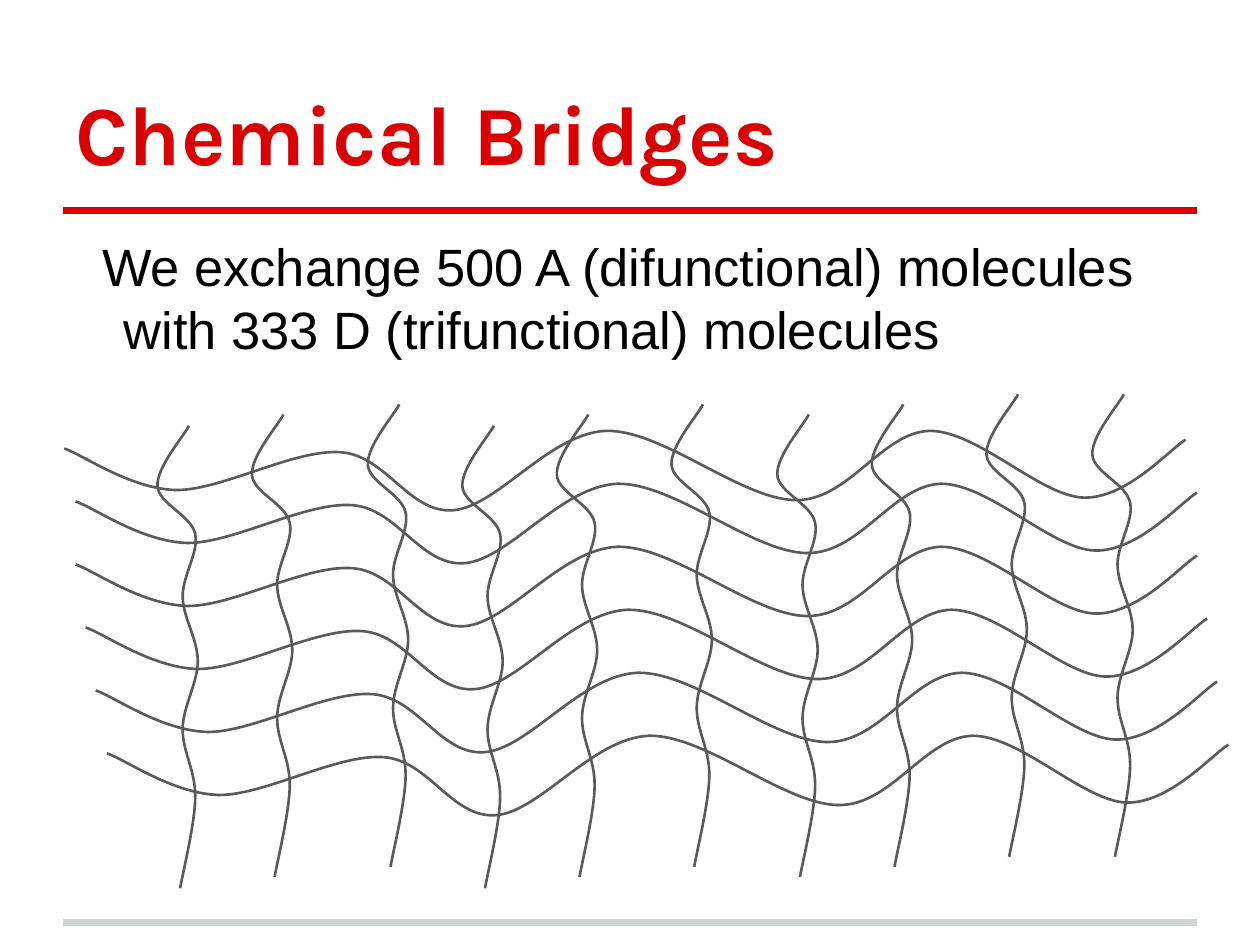
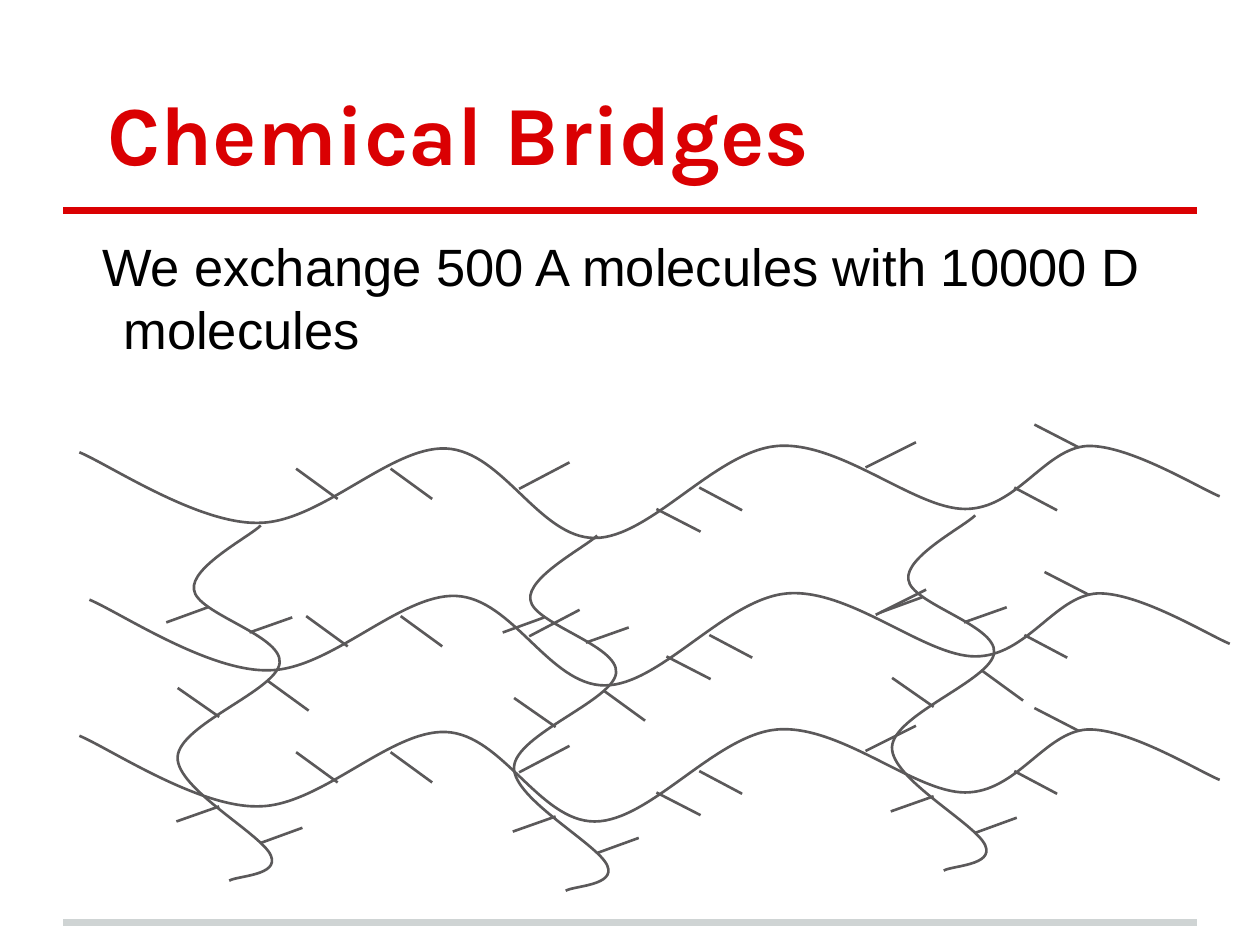
from dataclasses import dataclass

from lxml.etree import SubElement
from pptx import Presentation
from pptx.dml.color import RGBColor
from pptx.enum.shapes import MSO_CONNECTOR as Connector
from pptx.enum.text import MSO_ANCHOR as Anchor, MSO_AUTO_SIZE as AutoSize, PP_ALIGN as Align
from pptx.oxml.ns import qn
from pptx.util import Inches, Pt

Point = tuple[float, float]

COLORS = {"accent": "DA0002", "footer": "CFD4D4", "strand": "5B595A", "text": "000000"}
TITLE_FONT = {"name": "Karla", "size": Pt(48), "bold": True}
BODY_FONT = {"name": "Arial", "size": Pt(30), "bold": False}
INSETS = {f"margin_{side}": Inches(0.1) for side in ("left", "top", "right", "bottom")}
TITLE_FRAME = {**INSETS, "vertical_anchor": Anchor.BOTTOM, "word_wrap": True,
               "auto_size": AutoSize.NONE}
BODY_FRAME = {**TITLE_FRAME, "vertical_anchor": Anchor.TOP}
STRAND_WIDTH = 1.5
RULE_WIDTH = 4


@dataclass(frozen=True)
class Strand:
    """Bezier points, three to a segment, and side branches, all relative to the start."""
    curve: tuple[Point, ...]
    branches: tuple[tuple[Point, Point], ...] = ()


@dataclass(frozen=True)
class Network:
    """One strand repeated at several starting points."""
    strand: Strand
    starts: tuple[Point, ...]


@dataclass(frozen=True)
class BridgeSlide:
    title: str
    body: str
    title_indent: float
    networks: tuple[Network, ...]


TIGHT_WAVE = Strand((
    (0.15, 0.05), (0.52, 0.32), (0.89, 0.33),
    (1.26, 0.33), (1.83, 0), (2.2, 0.03),
    (2.56, 0.06), (2.74, 0.52), (3.09, 0.49),
    (3.44, 0.46), (3.85, -0.12), (4.3, -0.14),
    (4.75, -0.15), (5.38, 0.41), (5.81, 0.41),
    (6.23, 0.41), (6.49, -0.13), (6.87, -0.14),
    (7.25, -0.14), (7.75, 0.38), (8.09, 0.39),
    (8.43, 0.4), (8.77, 0.01), (8.9, -0.07),
))
TIGHT_BRIDGE = Strand((
    (-0.04, 0.08), (-0.26, 0.33), (-0.25, 0.48),
    (-0.24, 0.62), (0.02, 0.71), (0.05, 0.86),
    (0.08, 1), (-0.05, 1.19), (-0.05, 1.35),
    (-0.05, 1.52), (0.07, 1.69), (0.07, 1.87),
    (0.07, 2.04), (-0.05, 2.23), (-0.05, 2.41),
    (-0.05, 2.59), (0.05, 2.73), (0.05, 2.94),
    (0.05, 3.15), (-0.05, 3.55), (-0.07, 3.67),
))
LOOSE_WAVE = Strand(
    curve=(
        (0.24, 0.1), (0.94, 0.57), (1.42, 0.56),
        (1.91, 0.56), (2.47, -0.05), (2.91, -0.03),
        (3.36, -0.01), (3.65, 0.68), (4.09, 0.68),
        (4.53, 0.68), (5.05, -0.01), (5.54, -0.05),
        (6.04, -0.09), (6.63, 0.45), (7.03, 0.45),
        (7.44, 0.45), (7.66, -0.03), (8, -0.05),
        (8.33, -0.06), (8.88, 0.28), (9.05, 0.35),
    ),
    branches=(
        ((2.05, 0.37), (1.72, 0.13)), ((2.8, 0.37), (2.47, 0.13)),
        ((3.89, 0.08), (3.49, 0.29)), ((5.26, 0.46), (4.92, 0.28)),
        ((4.93, 0.63), (4.58, 0.45)), ((7.76, 0.46), (7.42, 0.28)),
        ((7.93, -0.04), (7.58, -0.22)), ((6.64, -0.08), (6.24, 0.12)),
    ),
)
LOOSE_BRIDGE = Strand(
    curve=(
        (-0.09, 0.09), (-0.56, 0.33), (-0.53, 0.51),
        (-0.51, 0.7), (0.17, 0.87), (0.15, 1.09),
        (0.13, 1.31), (-0.65, 1.58), (-0.66, 1.84),
        (-0.67, 2.09), (0.01, 2.45), (0.08, 2.62),
        (0.15, 2.78), (-0.19, 2.78), (-0.25, 2.82),
    ),
    branches=(
        ((0.38, 1.47), (0.05, 1.23)), ((-0.33, 1.52), (-0.66, 1.29)),
        ((-0.33, 2.23), (-0.67, 2.35)), ((0.33, 2.4), (0, 2.52)),
        ((-0.42, 0.65), (-0.75, 0.77)), ((0.25, 0.73), (-0.09, 0.85)),
    ),
)

SLIDES = (
    BridgeSlide(
        "Chemical Bridges",
        "We exchange 500 A (difunctional) molecules with 333 D (trifunctional) molecules",
        0,
        (
            Network(TIGHT_WAVE, ((0.51, 3.56), (0.6, 3.98), (0.6, 4.48),
                                 (0.68, 4.98), (0.76, 5.48), (0.85, 5.98))),
            Network(TIGHT_BRIDGE, ((1.5, 3.38), (2.25, 3.29), (3.17, 3.21), (3.92, 3.38),
                                   (4.67, 3.29), (5.58, 3.21), (6.42, 3.29), (7.17, 3.21),
                                   (8.08, 3.13), (8.92, 3.13))),
        ),
    ),
    BridgeSlide(
        "Chemical Bridges",
        "We exchange 500 A molecules with 10000 D molecules",
        0.25,
        (
            Network(LOOSE_WAVE, ((0.63, 3.59), (0.71, 4.76), (0.63, 5.84))),
            Network(LOOSE_BRIDGE, ((2.07, 4.17), (4.74, 4.25), (7.74, 4.09))),
        ),
    ),
)


def set_all(target, values: dict) -> None:
    for name, value in values.items():
        setattr(target, name, value)


def rgb(color: str) -> RGBColor:
    return RGBColor.from_string(COLORS[color])


def shift(start: Point, offset: Point) -> Point:
    return start[0] + offset[0], start[1] + offset[1]


def set_stroke(shape, color: str, width: float) -> None:
    shape.line.color.rgb = rgb(color)
    shape.line.width = Pt(width)


def add_line(page, start: Point, end: Point, color: str, width: float) -> None:
    line = page.shapes.add_connector(
        Connector.STRAIGHT, *(Inches(value) for value in (*start, *end)))
    set_stroke(line, color, width)
    SubElement(line.element.spPr, qn("a:effectLst"))


def add_curve(page, start: Point, points: list[Point]) -> None:
    """Draw an open outline whose points are grouped by three into Bezier segments."""
    builder = page.shapes.build_freeform(Inches(start[0]), Inches(start[1]))
    builder.add_line_segments([(Inches(x), Inches(y)) for x, y in points], close=False)
    shape = builder.convert_to_shape()
    shape.shadow.inherit = False
    shape.fill.background()
    set_stroke(shape, "strand", STRAND_WIDTH)
    outline = next(shape.element.iter(qn("a:path")))
    nodes = outline.findall(qn("a:lnTo"))
    for first in range(0, len(nodes), 3):
        segment = SubElement(outline, qn("a:cubicBezTo"))
        for node in nodes[first:first + 3]:
            segment.append(node[0])
            outline.remove(node)


def add_network(page, network: Network) -> None:
    for start in network.starts:
        add_curve(page, start, [shift(start, point) for point in network.strand.curve])
        for root, tip in network.strand.branches:
            add_line(page, shift(start, root), shift(start, tip), "strand", STRAND_WIDTH)


def fill_placeholder(box, text: str, top: float, height: float, frame: dict,
                     font: dict, color: str, margin: float, indent: float):
    """Place and format a one-paragraph placeholder, and return its paragraph."""
    set_all(box, {"left": Inches(0.5), "top": Inches(top),
                  "width": Inches(9), "height": Inches(height)})
    set_all(box.text_frame, frame)
    para = box.text_frame.paragraphs[0]
    para.alignment = Align.LEFT
    span = para.add_run()
    span.text = text
    set_all(span.font, font)
    span.font.color.rgb = rgb(color)
    properties = para._p.get_or_add_pPr()
    properties.set("marL", str(Inches(margin)))
    properties.set("indent", str(Inches(indent)))
    return para


def add_bridge_slide(deck, content: BridgeSlide) -> None:
    page = deck.slides.add_slide(deck.slide_layouts[1])
    for y, color in ((7.32, "footer"), (1.67, "accent")):
        add_line(page, (0.5, y), (9.5, y), color, RULE_WIDTH)
    fill_placeholder(page.shapes.title, content.title, 0.3, 1.25, TITLE_FRAME,
                     TITLE_FONT, "accent", 0, content.title_indent)
    para = fill_placeholder(page.placeholders[1], content.body, 1.76, 5.43, BODY_FRAME,
                            BODY_FONT, "text", 0.38, -0.17)
    para.space_before = Pt(6)
    SubElement(para._p.get_or_add_pPr(), qn("a:buNone"))
    for network in content.networks:
        add_network(page, network)


def main() -> None:
    deck = Presentation()
    deck.slide_width, deck.slide_height = Inches(10), Inches(7.5)
    for content in SLIDES:
        add_bridge_slide(deck, content)
    deck.save("out.pptx")


if __name__ == "__main__":
    main()
